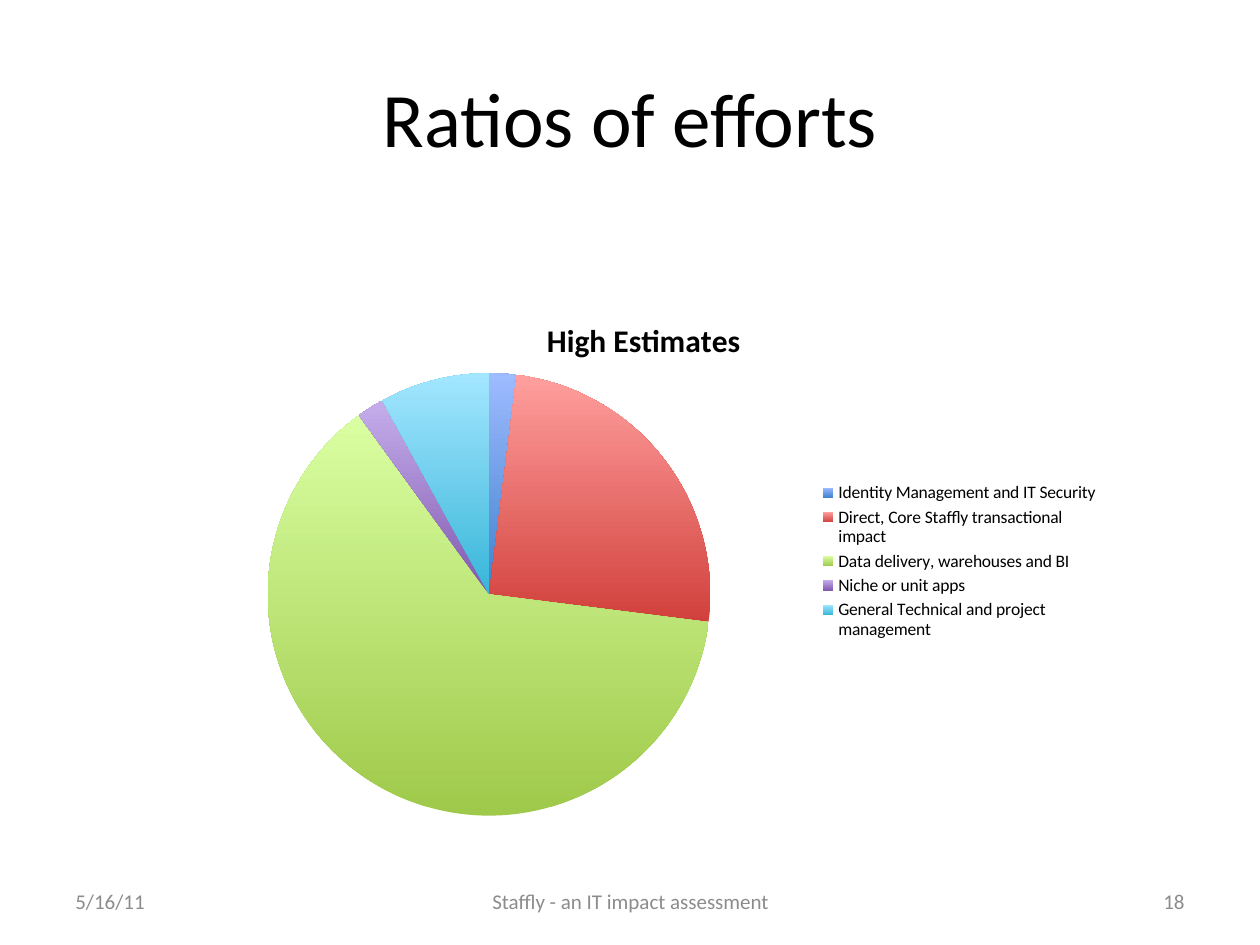
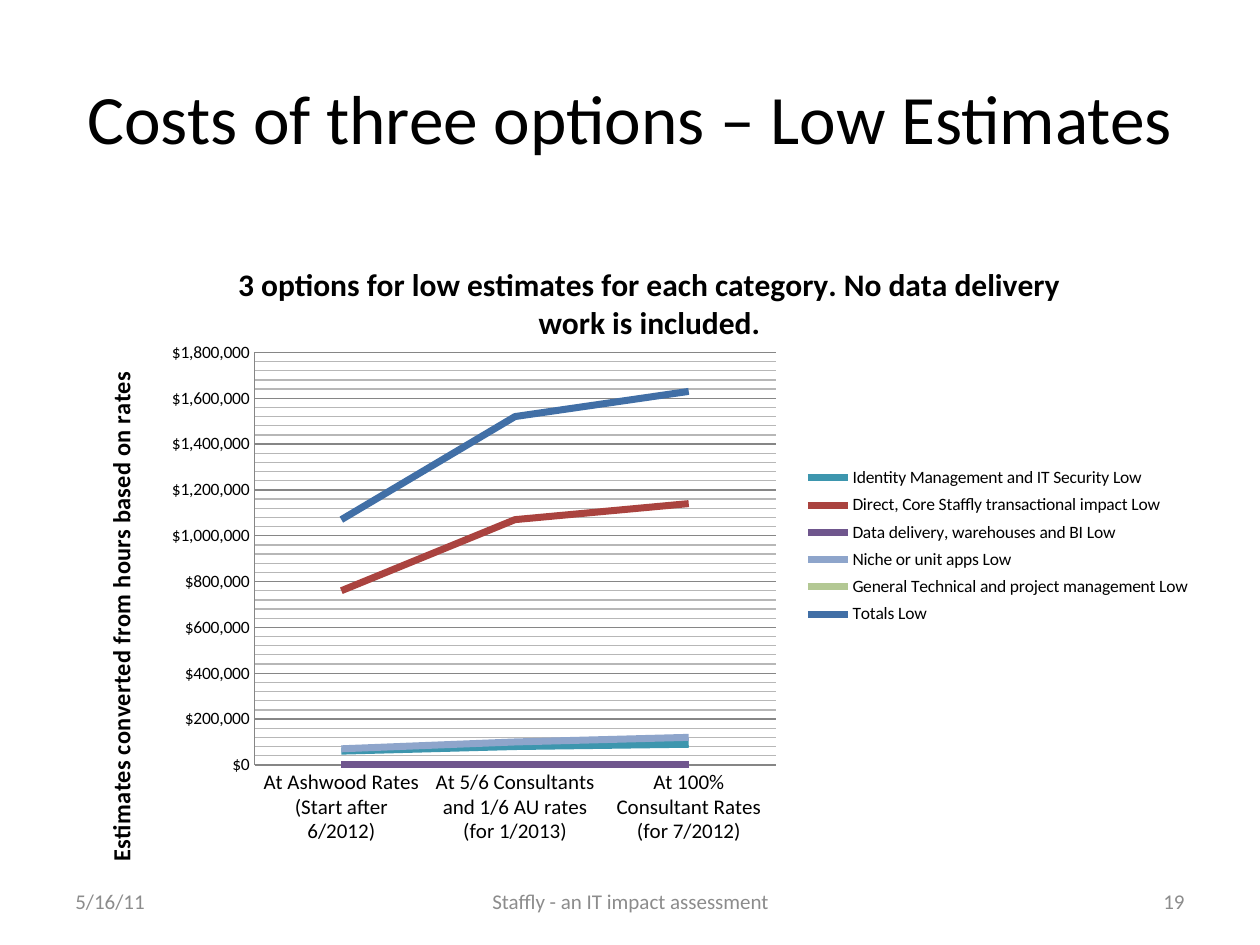
from dataclasses import dataclass

from pptx import Presentation
from pptx import util as u
from pptx.chart.data import CategoryChartData
from pptx.dml.color import RGBColor
from pptx.enum import chart as charts, text
from pptx.oxml import parse_xml
from pptx.oxml.ns import nsdecls, qn


@dataclass(frozen=True)
class Theme:
    font: str = "Calibri"
    ink: str = "000000"
    muted: str = "8C8C8C"
    axis: str = "868686"
    minor_grid: str = "B7B7B7"
    title_size: float = 44
    long_title_size: float = 39.6
    footer_size: float = 12
    chart_title_size: float = 18
    axis_title_size: float = 14
    category_size: float = 12
    chart_size: float = 10
    line_width: float = 4
    axis_width: float = 0.75


theme = Theme()
LEFT, CENTER, RIGHT = text.PP_ALIGN.LEFT, text.PP_ALIGN.CENTER, text.PP_ALIGN.RIGHT


def add_text(slide, words, box, size, color, align):
    """Add a one-line, vertically centred text box."""
    shape = slide.shapes.add_textbox(*[u.Inches(length) for length in box])
    frame = shape.text_frame
    frame.word_wrap = True
    frame.vertical_anchor = text.MSO_ANCHOR.MIDDLE
    frame.text = words
    paragraph = frame.paragraphs[0]
    paragraph.alignment = align
    font = paragraph.runs[0].font
    font.name, font.size = theme.font, u.Pt(size)
    font.color.rgb = RGBColor.from_string(color)


def place(element, index, **fractions):
    """Give a chart part a fixed place, in fractions of the chart."""
    for layout in element.findall(qn("c:layout")):
        element.remove(layout)
    target = '<c:layoutTarget val="inner"/>' if element.tag == qn("c:plotArea") else ""
    modes = "".join(f'<c:{key}Mode val="edge"/>' for key in "xy")
    values = "".join(f'<c:{key} val="{value}"/>' for key, value in fractions.items())
    element.insert(index, parse_xml(
        f'<c:layout {nsdecls("c")}><c:manualLayout>{target}{modes}{values}'
        "</c:manualLayout></c:layout>"))


presentation = Presentation()
presentation.slide_width, presentation.slide_height = u.Inches(10), u.Inches(7.5)

# Content of the two slides
efforts = [
    # category, share in percent, light colour, dark colour
    ("Identity Management and IT Security", 2, "9EBBFF", "3F80CD"),
    ("Direct, Core Staffly transactional impact", 25, "FF9F9D", "D1403C"),
    ("Data delivery, warehouses and BI", 63, "D9FFA2", "9FC94A"),
    ("Niche or unit apps", 2, "C5ADEB", "8058AF"),
    ("General Technical and project management", 8, "A3E6FF", "38B6D9"),
]
rates = ["At Ashwood Rates (Start after 6/2012)",
         "At 5/6 Consultants and 1/6 AU rates (for 1/2013)",
         "At 100% Consultant Rates (for 7/2012)"]
low_costs = [
    ([60000, 80000, 90000], "3D96AE"),
    ([760000, 1070000, 1140000], "AA433F"),
    ([0, 0, 0], "6F568D"),
    ([70000, 100000, 120000], "8EA5CB"),
    ([280000, None, None], "B3C894"),
    ([1070000, 1520000, 1630000], "416FA6"),
]
cost_names = [effort[0] for effort in efforts] + ["Totals"]

pie_data = CategoryChartData()
pie_data.categories = [effort[0] for effort in efforts]
pie_data.add_series("High Estimates", [effort[1] for effort in efforts])

line_data = CategoryChartData()
line_data.categories = rates
for name, (costs, color) in zip(cost_names, low_costs):
    line_data.add_series(f"{name} Low", costs)

pages = [
    dict(title="Ratios of efforts", size=theme.title_size, number="18",
         kind=charts.XL_CHART_TYPE.PIE, data=pie_data, box=(1.28, 2.26, 7.54, 4.39),
         chart_title="High Estimates", title_at=dict(x=0.4, y=0.05),
         plot=dict(x=0.11, y=0.16, w=0.47, h=0.8),
         legend=dict(x=0.69, y=0.35, w=0.3, h=0.3)),
    dict(title="Costs of three options – Low Estimates", size=theme.long_title_size,
         number="19", kind=charts.XL_CHART_TYPE.LINE, data=line_data,
         box=(0.7, 1.79, 8.8, 5.08),
         chart_title="3 options for low estimates for each category. "
                     "No data delivery work is included.",
         title_at=dict(x=0.13, y=0.05),
         plot=dict(x=0.15, y=0.2, w=0.47, h=0.65),
         legend=dict(x=0.65, y=0.37, w=0.35, h=0.27)),
]

# Shared frame of each slide: title, chart with title and legend, footers
built_charts = []
for page in pages:
    slide = presentation.slides.add_slide(presentation.slide_layouts[6])
    add_text(slide, page["title"], (0.5, 0.3, 9, 1.25), page["size"], theme.ink, CENTER)

    box = [u.Inches(length) for length in page["box"]]
    chart = slide.shapes.add_chart(page["kind"], *box, page["data"]).chart
    chart.font.name, chart.font.size = theme.font, u.Pt(theme.chart_size)
    chart.font.color.rgb = RGBColor.from_string(theme.ink)
    chart.has_title = True
    chart.chart_title.text_frame.text = page["chart_title"]
    title_font = chart.chart_title.text_frame.paragraphs[0].runs[0].font
    title_font.name, title_font.size = theme.font, u.Pt(theme.chart_title_size)
    title_font.bold = True
    chart.has_legend = True
    chart.legend.position = charts.XL_LEGEND_POSITION.RIGHT
    chart.legend.include_in_layout = False
    chart.plots[0].vary_by_categories = page["kind"] == charts.XL_CHART_TYPE.PIE
    chart_space = chart._chartSpace
    place(chart_space.find(".//" + qn("c:plotArea")), 0, **page["plot"])
    place(chart_space.find(".//" + qn("c:legend")), 1, **page["legend"])
    place(chart_space.find(".//" + qn("c:title")), 1, **page["title_at"])
    built_charts.append(chart)

    for words, left, width, align in [
            ("5/16/11", 0.5, 2.33, LEFT),
            (page["number"], 7.17, 2.33, RIGHT),
            ("Staffly - an IT impact assessment", 3.42, 3.17, CENTER)]:
        add_text(slide, words, (left, 6.95, width, 0.4), theme.footer_size, theme.muted, align)

pie_chart, line_chart = built_charts

# Pie slices: light at the top, dark at the bottom
for index, (category, share, light, dark) in enumerate(efforts):
    fill = pie_chart.plots[0].series[0].points[index].format.fill
    fill.gradient()
    fill.gradient_angle = 90
    for stop, color in zip(fill.gradient_stops, (dark, light)):
        stop.color.rgb = RGBColor.from_string(color)

# Cost lines
for series, (costs, color) in zip(line_chart.plots[0].series, low_costs):
    series.smooth = False
    series.marker.style = charts.XL_MARKER_STYLE.NONE
    series.format.line.width = u.Pt(theme.line_width)
    series.format.line.color.rgb = RGBColor.from_string(color)

# Cost axes and grid
value_axis, category_axis = line_chart.value_axis, line_chart.category_axis
value_axis.minimum_scale, value_axis.maximum_scale = 0, 1800000
value_axis.major_unit, value_axis.minor_unit = 200000, 40000
value_axis.has_major_gridlines = value_axis.has_minor_gridlines = True
value_axis.tick_labels.number_format = r"\$#,##0"
value_axis.tick_labels.number_format_is_linked = False
category_axis.tick_labels.font.size = u.Pt(theme.category_size)
for axis in (value_axis, category_axis):
    axis.major_tick_mark = axis.minor_tick_mark = charts.XL_TICK_MARK.NONE
for part in (value_axis, category_axis, value_axis.major_gridlines):
    part.format.line.width = u.Pt(theme.axis_width)
    part.format.line.color.rgb = RGBColor.from_string(theme.axis)
minor_gridlines = line_chart._chartSpace.find(".//" + qn("c:minorGridlines"))
minor_gridlines.append(parse_xml(
    f'<c:spPr {nsdecls("c", "a")}><a:ln w="{u.Pt(theme.axis_width)}"><a:solidFill>'
    f'<a:srgbClr val="{theme.minor_grid}"/></a:solidFill></a:ln></c:spPr>'))

# Upright title of the value axis
value_axis.has_title = True
axis_frame = value_axis.axis_title.text_frame
axis_frame.text = "Estimates converted from hours based on rates"
axis_font = axis_frame.paragraphs[0].runs[0].font
axis_font.name, axis_font.size, axis_font.bold = theme.font, u.Pt(theme.axis_title_size), True
axis_title = line_chart._chartSpace.find(f".//{qn('c:valAx')}/{qn('c:title')}")
axis_title.find(".//" + qn("a:bodyPr")).set("rot", "-5400000")
place(axis_title, 1, x=0.01, y=0.23)

presentation.save("out.pptx")
